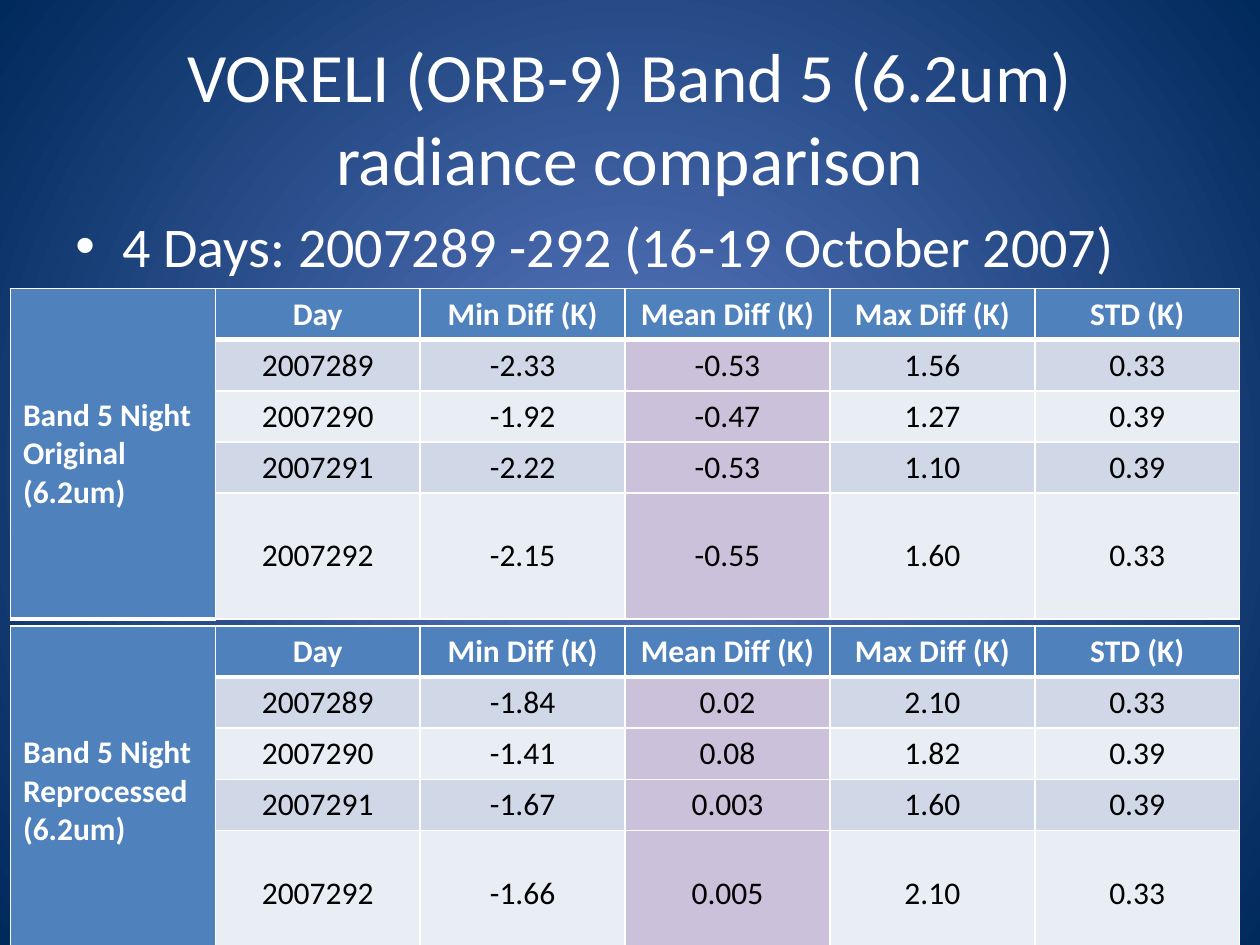
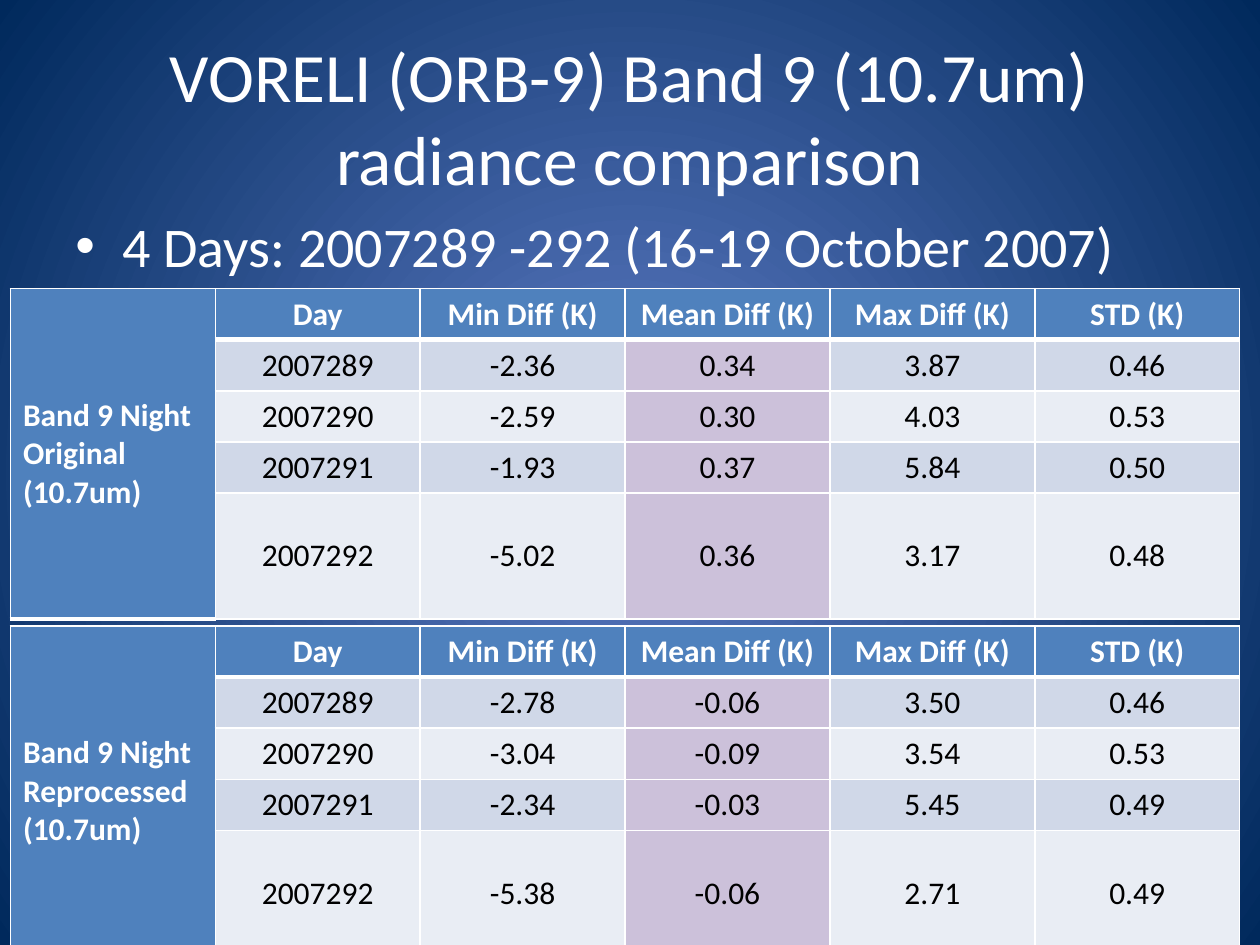
from dataclasses import dataclass
from typing import Any

from lxml.etree import Element, SubElement
from pptx import Presentation
from pptx.dml.color import RGBColor
from pptx.enum.text import MSO_ANCHOR, PP_ALIGN
from pptx.oxml.ns import qn
from pptx.util import Cm, Pt

# Shared look
FONT = "Calibri"
WHITE, BLACK = "FFFFFF", "000000"
GLOW, NAVY = "5E7CC5", "00295C"
BLUE, MAUVE = "4F81BD", "CCC1DA"
BANDS = ("D0D8E8", "E9EDF4")

# Table grid
HEADS = ("Day", "Min Diff (K)", "Mean Diff (K)", "Max Diff (K)", "STD (K)")
DAYS = ("2007289", "2007290", "2007291", "2007292")
MEAN = HEADS.index("Mean Diff (K)") + 1
LEFT, WIDTH, HEIGHT = Cm(0.21), Cm(4.13), Cm(1.03)
TOPS = (Cm(5.82), Cm(12.62))


@dataclass(frozen=True)
class Block:
    name: str
    rows: tuple[str, ...]  # min, mean, max and deviation of each day


@dataclass(frozen=True)
class Page:
    band: int
    wave: str
    blocks: tuple[Block, ...]


PAGES = (
    Page(5, "6.2um", (
        Block("Original", ("-2.33 -0.53 1.56 0.33", "-1.92 -0.47 1.27 0.39",
                           "-2.22 -0.53 1.10 0.39", "-2.15 -0.55 1.60 0.33")),
        Block("Reprocessed", ("-1.84 0.02 2.10 0.33", "-1.41 0.08 1.82 0.39",
                              "-1.67 0.003 1.60 0.39", "-1.66 0.005 2.10 0.33")),
    )),
    Page(9, "10.7um", (
        Block("Original", ("-2.36 0.34 3.87 0.46", "-2.59 0.30 4.03 0.53",
                           "-1.93 0.37 5.84 0.50", "-5.02 0.36 3.17 0.48")),
        Block("Reprocessed", ("-2.78 -0.06 3.50 0.46", "-3.04 -0.09 3.54 0.53",
                              "-2.34 -0.03 5.45 0.49", "-5.38 -0.06 2.71 0.49")),
    )),
)


def color(code: str) -> RGBColor:
    return RGBColor.from_string(code)


def style(frame: Any, size: float, ink: str, align: PP_ALIGN, bold: bool = False) -> None:
    for para in frame.paragraphs:
        para.alignment = align
        for run in para.runs:
            font = run.font
            font.name, font.size, font.bold = FONT, Pt(size), bold
            font.color.rgb = color(ink)


def backdrop(master: Any) -> None:
    """Radial gradient behind every slide."""
    fill = master.background.fill
    fill.gradient()
    for stop, code in zip(fill.gradient_stops, (GLOW, NAVY)):
        stop.color.rgb = color(code)
    grad = master.element.find(".//" + qn("a:gradFill"))
    ring = Element(qn("a:path"), path="circle")
    SubElement(ring, qn("a:fillToRect"), l="50000", t="50000", r="50000", b="50000")
    grad.replace(grad.find(qn("a:lin")), ring)


def add_text(slide: Any, text: str, top: Cm, height: Cm, size: float,
             align: PP_ALIGN, anchor: MSO_ANCHOR) -> Any:
    frame = slide.shapes.add_textbox(Cm(1.27), top, Cm(22.86), height).text_frame
    frame.word_wrap = True
    frame.vertical_anchor = anchor
    frame.text = text
    style(frame, size, WHITE, align)
    return frame.paragraphs[0]


def add_bullet(para: Any) -> None:
    para.space_before = Pt(6.4)
    props = para._p.get_or_add_pPr()
    props.set("marL", str(Cm(0.95)))
    props.set("indent", str(-Cm(0.95)))
    SubElement(props, qn("a:buFont"), typeface="Arial")
    SubElement(props, qn("a:buChar"), char="•")


def edge(cell: Any, top: int, base: int) -> None:
    """White borders; top and base widths in points."""
    props = cell._tc.get_or_add_tcPr()
    for side, width in (("L", 1), ("R", 1), ("T", top), ("B", base)):
        line = SubElement(props, qn(f"a:ln{side}"), w=str(Pt(width)))
        solid = SubElement(line, qn("a:solidFill"))
        SubElement(solid, qn("a:srgbClr"), val=WHITE)


def paint(cell: Any, text: str, row: int, col: int) -> None:
    head = row == 0
    edge(cell, 3 if row == 1 else 1, 3 if head else 1)
    shade = BLUE if head else MAUVE if col == MEAN else BANDS[(row - 1) % 2]
    cell.fill.solid()
    cell.fill.fore_color.rgb = color(shade)
    cell.vertical_anchor = MSO_ANCHOR.MIDDLE
    cell.text_frame.text = text
    style(cell.text_frame, 18, WHITE if head else BLACK,
          PP_ALIGN.CENTER if col else PP_ALIGN.LEFT, head)


def add_block(slide: Any, page: Page, block: Block, top: Cm) -> None:
    lines = [HEADS] + [(day, *row.split()) for day, row in zip(DAYS, block.rows)]
    count, wide = len(lines), len(HEADS) + 1
    table = slide.shapes.add_table(count, wide, LEFT, top,
                                   WIDTH * wide, HEIGHT * count).table
    table.first_row = table.horz_banding = False
    for part in table.columns:
        part.width = WIDTH
    for part in table.rows:
        part.height = HEIGHT

    # Side label spans all rows
    label = table.cell(0, 0)
    label.merge(table.cell(count - 1, 0))
    paint(label, f"Band {page.band} Night {block.name}\n({page.wave})", 0, 0)
    for row, line in enumerate(lines):
        for col, text in enumerate(line, 1):
            paint(table.cell(row, col), text, row, col)


def add_page(deck: Any, page: Page) -> None:
    slide = deck.slides.add_slide(deck.slide_layouts[6])
    add_text(slide, f"VORELI (ORB-9) Band {page.band} ({page.wave}) radiance comparison",
             Cm(0.76), Cm(3.18), 39.6, PP_ALIGN.CENTER, MSO_ANCHOR.MIDDLE)
    add_bullet(add_text(slide, "4 Days: 2007289 -292 (16-19 October 2007)",
                        Cm(4.13), Cm(12.57), 32, PP_ALIGN.LEFT, MSO_ANCHOR.TOP))
    for block, top in zip(page.blocks, TOPS):
        add_block(slide, page, block, top)


def main() -> None:
    deck = Presentation()
    deck.slide_width, deck.slide_height = Cm(25.4), Cm(19.05)
    backdrop(deck.slide_master)
    for page in PAGES:
        add_page(deck, page)
    deck.save("out.pptx")


if __name__ == "__main__":
    main()
